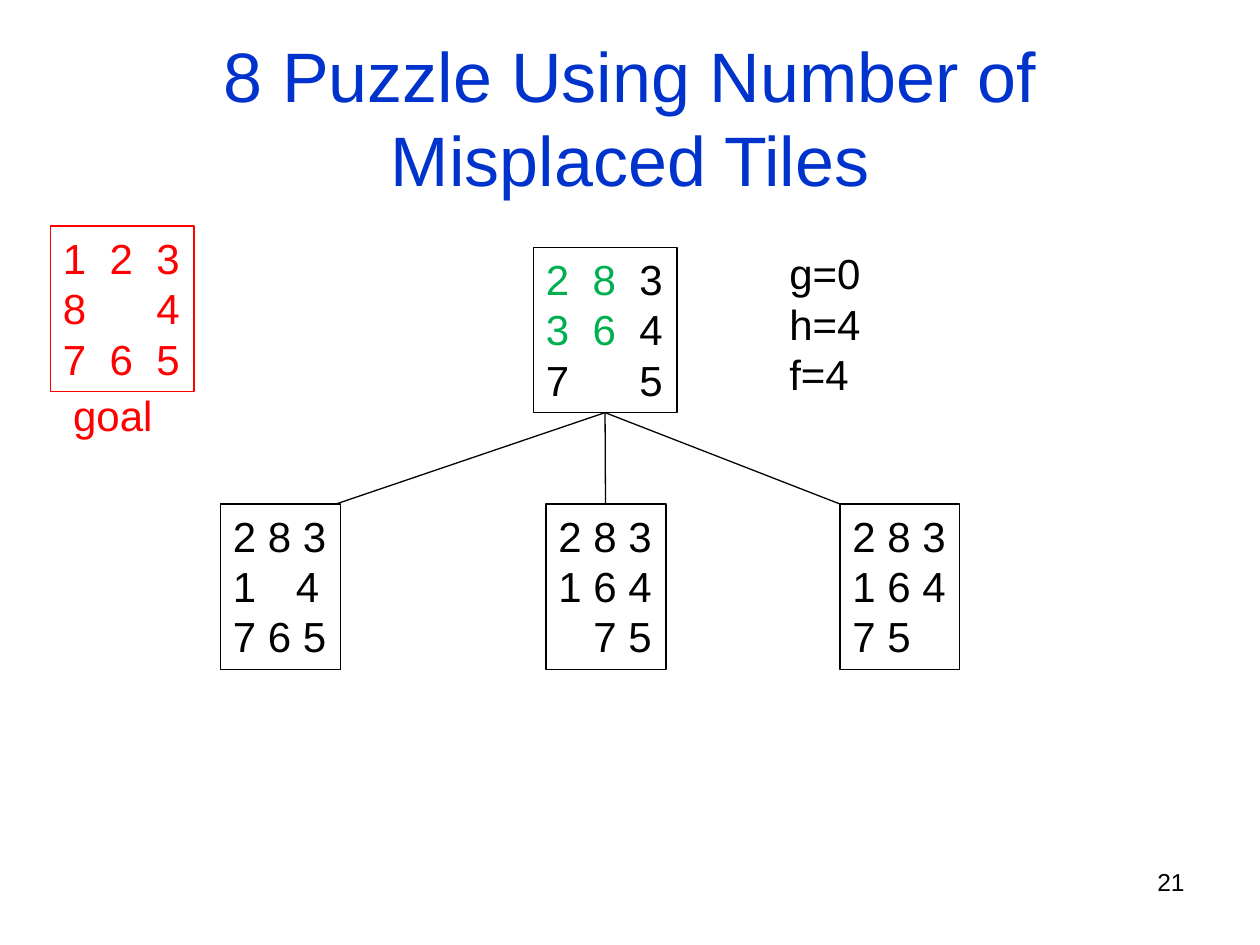
from dataclasses import dataclass
from itertools import groupby

from lxml.etree import SubElement
from pptx import Presentation
from pptx.dml.color import RGBColor
from pptx.enum.shapes import MSO_CONNECTOR as Connector, MSO_SHAPE as Shape
from pptx.enum.text import MSO_ANCHOR as Anchor, MSO_AUTO_SIZE as AutoSize, PP_ALIGN as Align
from pptx.oxml.ns import qn
from pptx.util import Pt


@dataclass(frozen=True)
class Theme:
    font: str = "Arial"
    title_size: float = 40
    body_size: float = 24
    number_size: float = 14
    line_width: float = 0.75
    title: str = "0033CC"
    ink: str = "000000"
    goal: str = "FF0000"
    misplaced: str = "00B050"


THEME = Theme()
BOARD_HEIGHT = 94.5
DIGIT_AND_SPACE = 20
WIDE_BOARD, WIDE_PITCH = 82, 26.7
NARROW_BOARD, NARROW_PITCH = 68.5, DIGIT_AND_SPACE


def rgb(code):
    return RGBColor.from_string(code)


def write_text(paragraph, text, size=THEME.body_size, color=THEME.ink,
               align=Align.LEFT, spacing=0):
    paragraph.alignment = align
    run = paragraph.add_run()
    run.text = text
    run.font.name = THEME.font
    run.font.size = Pt(size)
    run.font.color.rgb = rgb(color)
    if spacing:
        run.font._element.set("spc", str(round(spacing * 100)))


def set_indent(paragraph, indent, number=None):
    """Indent a row; a number becomes its automatic, hanging first tile."""
    properties = paragraph._p.get_or_add_pPr()
    properties.set("marL", str(int(Pt(indent))))
    properties.set("indent", str(int(Pt(-indent if number else 0))))
    if number:
        SubElement(properties, qn("a:buFont"), typeface=THEME.font)
        SubElement(properties, qn("a:buAutoNum"), type="arabicPlain", startAt=number)


class SlideBuilder:
    def __init__(self, slide, theme):
        self.slide = slide
        self.theme = theme

    def title(self, text, left, top, width, height):
        heading = self.slide.shapes.title
        heading.left, heading.top = Pt(left), Pt(top)
        heading.width, heading.height = Pt(width), Pt(height)
        frame = heading.text_frame
        frame.word_wrap = True
        frame.auto_size = AutoSize.NONE
        frame.vertical_anchor = Anchor.MIDDLE
        write_text(frame.paragraphs[0], text, size=self.theme.title_size,
                   color=self.theme.title, align=Align.CENTER)

    def label(self, lines, left, top, width, height, **text_format):
        box = self.slide.shapes.add_textbox(Pt(left), Pt(top), Pt(width), Pt(height))
        frame = box.text_frame
        frame.word_wrap = True
        for index, line in enumerate(lines):
            paragraph = frame.add_paragraph() if index else frame.paragraphs[0]
            write_text(paragraph, line, **text_format)

    def board(self, rows, left, top, width, pitch, color=THEME.ink,
              misplaced=(), numbered=None):
        """Draw a 3 by 3 puzzle.

        misplaced holds (row, column) pairs to highlight; numbered maps each
        automatically numbered row to the indent of its remaining tiles.
        """
        box = self.slide.shapes.add_shape(
            Shape.RECTANGLE, Pt(left), Pt(top), Pt(width), Pt(BOARD_HEIGHT))
        box.shadow.inherit = False
        box.fill.background()
        box.line.color.rgb = rgb(color)
        box.line.width = Pt(self.theme.line_width)
        frame = box.text_frame
        frame.word_wrap = True
        frame.vertical_anchor = Anchor.TOP
        frame.margin_right = 0
        for r, row in enumerate(rows):
            paragraph = frame.add_paragraph() if r else frame.paragraphs[0]
            tiles = [(c, tile) for c, tile in enumerate(row) if tile != " "]
            if numbered and r in numbered:
                set_indent(paragraph, numbered[r], number=tiles.pop(0)[1])
            else:
                set_indent(paragraph, tiles[0][0] * pitch)
            pieces, previous = [], None
            for c, tile in tiles:
                tile_color = self.theme.misplaced if (r, c) in misplaced else color
                if previous is not None:
                    gap = (c - previous) * pitch - DIGIT_AND_SPACE
                    pieces.append((" ", color, gap))
                pieces.append((tile, tile_color, 0))
                previous = c
            for (piece_color, gap), group in groupby(pieces, key=lambda piece: piece[1:]):
                write_text(paragraph, "".join(piece[0] for piece in group),
                           color=piece_color, spacing=gap)

    def branch(self, start, end):
        line = self.slide.shapes.add_connector(
            Connector.STRAIGHT, *(Pt(value) for value in (*start, *end)))
        line.line.color.rgb = rgb(self.theme.ink)
        line.line.width = Pt(self.theme.line_width)
        SubElement(line._element.spPr, qn("a:effectLst"))


def main():
    deck = Presentation()
    deck.slide_width, deck.slide_height = Pt(720), Pt(540)
    builder = SlideBuilder(deck.slides.add_slide(deck.slide_layouts[5]), THEME)

    builder.title("8 Puzzle Using Number of Misplaced Tiles", 36, 21.6, 648, 90)
    builder.label(["21"], 516, 492, 168, 37.5, size=THEME.number_size, align=Align.RIGHT)

    builder.board(["123", "8 4", "765"], 28.8, 129.2, WIDE_BOARD, WIDE_PITCH,
                  color=THEME.goal, numbered={0: WIDE_PITCH, 1: 2 * WIDE_PITCH})
    builder.label(["goal"], 34.7, 219, 60, 36, color=THEME.goal)

    root_top = 141.3
    builder.board(["283", "364", "7 5"], 304.8, root_top, WIDE_BOARD, WIDE_PITCH,
                  misplaced={(0, 0), (0, 1), (1, 0), (1, 1)},
                  numbered={0: WIDE_PITCH, 1: WIDE_PITCH})
    builder.label(["g=0", "h=4", "f=4"], 444, 138, 56, BOARD_HEIGHT)

    child_top = 288
    root_exit = (345.75, root_top + BOARD_HEIGHT)
    children = [
        (126, 192, ["283", "1 4", "765"], {1: 36}),
        (312, 346, ["283", "164", " 75"], None),
        (480, 480, ["283", "164", "75 "], None),
    ]
    for left, entry, rows, numbered in children:
        builder.board(rows, left, child_top, NARROW_BOARD, NARROW_PITCH, numbered=numbered)
        builder.branch(root_exit, (entry, child_top))

    deck.save("out.pptx")


if __name__ == "__main__":
    main()
